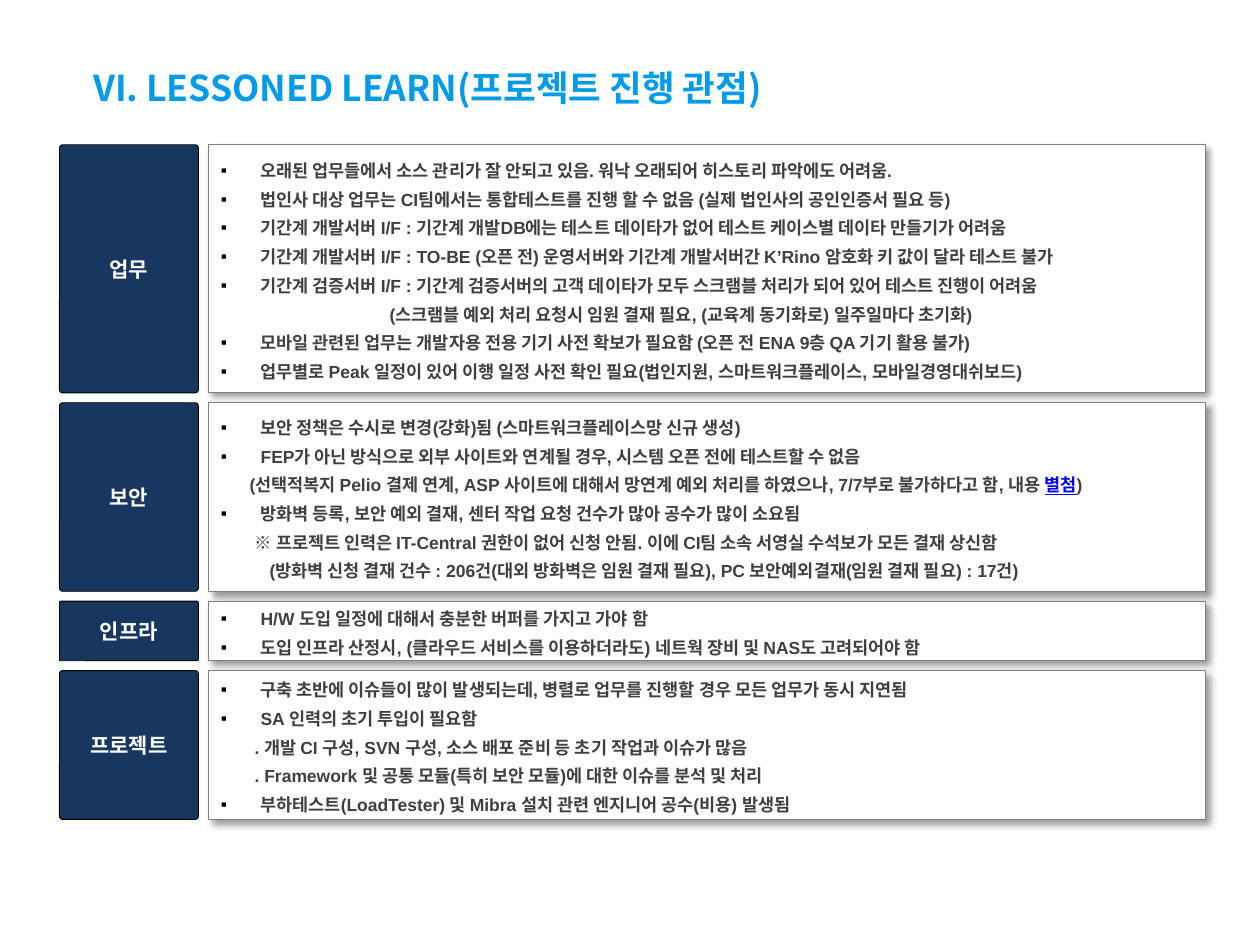
from dataclasses import dataclass

from lxml.etree import SubElement
from pptx import Presentation
from pptx.dml.color import RGBColor
from pptx.enum.shapes import MSO_SHAPE as Shape
from pptx.enum.text import MSO_ANCHOR as Anchor, MSO_AUTO_SIZE as AutoSize, PP_ALIGN as Align
from pptx.oxml.ns import qn
from pptx.util import Cm, Pt


@dataclass(frozen=True)
class Theme:
    title: str = "039BE7"
    label: str = "17375E"
    panel: str = "FFFFFF"
    border: str = "808080"
    dark: str = "000000"
    body: str = "404040"
    link: str = "0000FF"
    heading_font: str = "Noto Sans CJK KR"
    body_font: str = "Arial"
    title_size: float = 20.3
    label_size: float = 12
    body_size: float = 10


THEME = Theme()
BULLET_INDENT = 0.8
GAP = 0.2
COMPARISON_LAYOUT = 4  # a title and four body placeholders

# Each section: label, height in cm, lines.
# A line is a bullet, or a pair of left indent in cm and unbulleted text.
# Text between bars is shown as a reference.
SECTIONS = [
    ("업무", 5, [
        "오래된 업무들에서 소스 관리가 잘 안되고 있음. 워낙 오래되어 히스토리 파악에도 어려움.",
        "법인사 대상 업무는 CI팀에서는 통합테스트를 진행 할 수 없음 (실제 법인사의 공인인증서 필요 등)",
        "기간계 개발서버 I/F : 기간계 개발DB에는 테스트 데이타가 없어 테스트 케이스별 데이타 만들기가 어려움",
        "기간계 개발서버 I/F : TO-BE (오픈 전) 운영서버와 기간계 개발서버간 K’Rino 암호화 키 값이 달라 테스트 불가",
        "기간계 검증서버 I/F : 기간계 검증서버의 고객 데이타가 모두 스크램블 처리가 되어 있어 테스트 진행이 어려움",
        (3.4, "(스크램블 예외 처리 요청시 임원 결재 필요, (교육계 동기화로) 일주일마다 초기화)"),
        "모바일 관련된 업무는 개발자용 전용 기기 사전 확보가 필요함 (오픈 전 ENA 9층 QA 기기 활용 불가)",
        "업무별로 Peak 일정이 있어 이행 일정 사전 확인 필요(법인지원, 스마트워크플레이스, 모바일경영대쉬보드)",
    ]),
    ("보안", 3.8, [
        "보안 정책은 수시로 변경(강화)됨 (스마트워크플레이스망 신규 생성)",
        "FEP가 아닌 방식으로 외부 사이트와 연계될 경우, 시스템 오픈 전에 테스트할 수 없음",
        (0.58, "(선택적복지 Pelio 결제 연계, ASP 사이트에 대해서 망연계 예외 처리를 하였으나, "
               "7/7부로 불가하다고 함, 내용 |별첨|)"),
        "방화벽 등록, 보안 예외 결재, 센터 작업 요청 건수가 많아 공수가 많이 소요됨",
        (0.68, "※ 프로젝트 인력은 IT-Central 권한이 없어 신청 안됨. 이에 CI팀 소속 서영실 수석보가 모든 결재 상신함"),
        (0.98, "(방화벽 신청 결재 건수 : 206건(대외 방화벽은 임원 결재 필요), PC 보안예외결재(임원 결재 필요) : 17건)"),
    ]),
    ("인프라", 1.2, [
        "H/W 도입 일정에 대해서 충분한 버퍼를 가지고 가야 함",
        "도입 인프라 산정시, (클라우드 서비스를 이용하더라도) 네트웍 장비 및 NAS도 고려되어야 함",
    ]),
    ("프로젝트", 3, [
        "구축 초반에 이슈들이 많이 발생되는데, 병렬로 업무를 진행할 경우 모든 업무가 동시 지연됨",
        "SA 인력의 초기 투입이 필요함",
        (0.68, ". 개발 CI 구성, SVN 구성, 소스 배포 준비 등 초기 작업과 이슈가 많음"),
        (0.68, ". Framework 및 공통 모듈(특히 보안 모듈)에 대한 이슈를 분석 및 처리"),
        "부하테스트(LoadTester) 및 Mibra 설치 관련 엔지니어 공수(비용) 발생됨",
    ]),
]


def rgb(color):
    return RGBColor.from_string(color)


def place(shape, left, top, width, height):
    shape.left, shape.top, shape.width, shape.height = map(Cm, (left, top, width, height))


def paint(shape, fill, line):
    shape.fill.solid()
    shape.fill.fore_color.rgb = rgb(fill)
    shape.line.color.rgb = rgb(line)
    shape.line.width = Pt(0.5)


def style_run(run, font, size, color):
    run.font.name = font
    run.font.size = Pt(size)
    run.font.bold = True
    run.font.color.rgb = rgb(color)
    if font == THEME.heading_font:
        SubElement(run.font._element, qn("a:ea"), typeface=font)


def add_shadow(shape):
    effects = SubElement(shape._element.spPr, qn("a:effectLst"))
    shadow = SubElement(effects, qn("a:outerShdw"), blurRad=str(Pt(4)), dist=str(Pt(3)),
                        dir=str(45 * 60000), algn="tl", rotWithShape="0")
    color = SubElement(shadow, qn("a:srgbClr"), val=THEME.dark)
    SubElement(color, qn("a:alpha"), val="40000")


def set_indent(paragraph, left, bulleted):
    props = paragraph._p.get_or_add_pPr()
    props.set("marL", str(Cm(left)))
    props.set("indent", str(-Cm(left) if bulleted else 0))
    if bulleted:
        SubElement(SubElement(props, qn("a:buClr")), qn("a:srgbClr"), val=THEME.dark)
        SubElement(props, qn("a:buFont"), typeface=THEME.body_font)
        SubElement(props, qn("a:buChar"), char="▪")
    else:
        SubElement(props, qn("a:buNone"))


def add_title(title, left, top, width, height):
    place(title, left, top, width, height)
    frame = title.text_frame
    frame.text = "VI. LESSONED LEARN(프로젝트 진행 관점)"
    frame.auto_size = AutoSize.NONE
    frame.vertical_anchor = Anchor.MIDDLE
    frame.margin_left = Cm(0.15)
    heading = frame.paragraphs[0]
    heading.alignment = Align.LEFT
    style_run(heading.runs[0], THEME.heading_font, THEME.title_size, THEME.title)


def add_label(slide, name, left, top, width, height):
    label = slide.shapes.add_shape(Shape.ROUNDED_RECTANGLE, *map(Cm, (left, top, width, height)))
    label.adjustments[0] = 0.022
    label.shadow.inherit = False
    paint(label, THEME.label, THEME.dark)
    frame = label.text_frame
    frame.text = name
    frame.vertical_anchor = Anchor.MIDDLE
    frame.paragraphs[0].alignment = Align.CENTER
    style_run(frame.paragraphs[0].runs[0], THEME.heading_font, THEME.label_size, THEME.white
              if hasattr(THEME, "white") else THEME.panel)


def fill_panel(panel, lines, left, top, width, height):
    place(panel, left, top, width, height)
    paint(panel, THEME.panel, THEME.border)
    add_shadow(panel)
    frame = panel.text_frame
    frame.auto_size = AutoSize.NONE
    frame.vertical_anchor = Anchor.MIDDLE
    for number, line in enumerate(lines):
        bulleted = isinstance(line, str)
        indent, text = (BULLET_INDENT, line) if bulleted else line
        paragraph = frame.add_paragraph() if number else frame.paragraphs[0]
        set_indent(paragraph, indent, bulleted)
        paragraph.line_spacing = 1.2
        paragraph.space_before = Pt(2 if number else 0)
        for part, words in enumerate(text.split("|")):
            run = paragraph.add_run()
            run.text = words
            is_reference = part % 2 == 1
            style_run(run, THEME.body_font, THEME.body_size,
                      THEME.link if is_reference else THEME.body)
            if is_reference:
                run.font.underline = True


def add_sections(slide, panels, left, top, width, label_width):
    panel_left = left + label_width + GAP
    for panel, (name, height, lines) in zip(panels, SECTIONS):
        fill_panel(panel, lines, panel_left, top, left + width - panel_left, height)
        add_label(slide, name, left, top, label_width, height)
        top += height + GAP


def main():
    deck = Presentation()
    deck.slide_width, deck.slide_height = Cm(25.4), Cm(19.05)
    slide = deck.slides.add_slide(deck.slide_layouts[COMPARISON_LAYOUT])
    title, *panels = slide.placeholders
    add_title(title, 1.73, 1.17, 21.44, 1.2)
    add_sections(slide, panels, left=1.2, top=2.92, width=23.1, label_width=2.8)
    deck.save("out.pptx")


if __name__ == "__main__":
    main()
